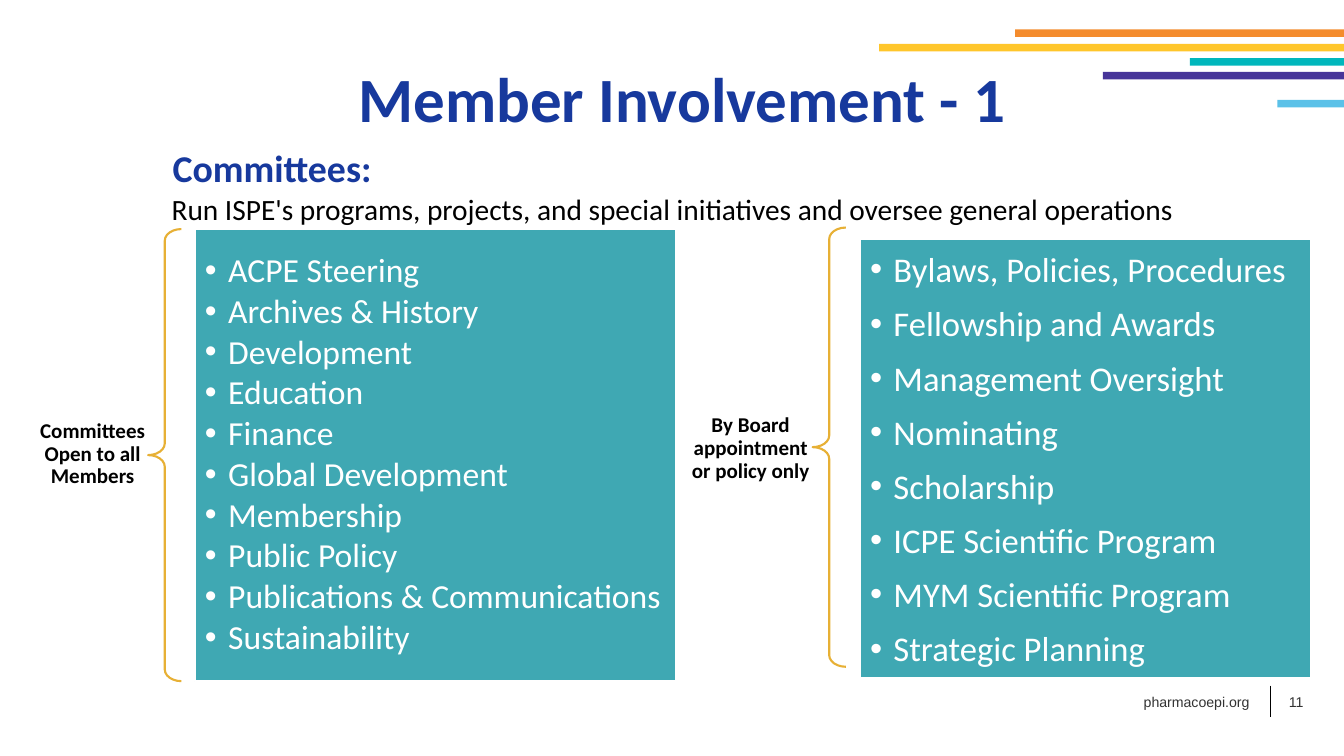
"""Builds the Member Involvement slide with its two bracketed committee lists."""
from lxml import etree
from pptx import Presentation
from pptx.dml.color import RGBColor
from pptx.enum.shapes import MSO_CONNECTOR, MSO_SHAPE
from pptx.enum.text import MSO_ANCHOR, PP_ALIGN
from pptx.oxml.ns import qn
from pptx.util import Inches, Pt

LEFT, CENTER = PP_ALIGN.LEFT, PP_ALIGN.CENTER
TOP, MIDDLE = MSO_ANCHOR.TOP, MSO_ANCHOR.MIDDLE
RECTANGLE, BRACE = MSO_SHAPE.RECTANGLE, MSO_SHAPE.LEFT_BRACE
STRAIGHT = MSO_CONNECTOR.STRAIGHT

SLIDE_WIDTH, SLIDE_HEIGHT = 17.78, 10
BLUE, TEAL, GOLD = "17399D", "3FA8B3", "E7B035"
WHITE, BLACK, GREY = "FFFFFF", "000000", "333333"
BULLET_INDENT = 0.31

STRIPES = [
    (13.43, 0.39, "F48C2D"),
    (11.63, 0.58, "FFC62B"),
    (15.74, 0.77, "00B7BC"),
    (14.59, 0.95, "473599"),
    (16.9, 1.32, "5BC1E8"),
]
STRIPE_HEIGHT = 0.1

TITLE = "Member Involvement - 1"
HEADING = "Committees:"
SUMMARY = "Run ISPE's programs, projects, and special initiatives and oversee general operations"
FOOTER, PAGE_NUMBER = "pharmacoepi.org", "11"

GROUPS = [
    {
        "label": "Committees Open to all Members",
        "label_at": (0.13, 5.49, 2.19, 1.04),
        "brace_at": (1.96, 3.03, 0.44, 5.98),
        "panel_at": (2.58, 3.03, 6.36, 5.98),
        "size": 32, "line_spacing": 0.9, "space_after": 4.2, "inset": 0.13,
        "items": ["ACPE Steering", "Archives & History", "Development", "Education",
                  "Finance", "Global Development", "Membership", "Public Policy",
                  "Publications & Communications", "Sustainability"],
    },
    {
        "label": "By Board appointment or policy only",
        "label_at": (8.97, 5.21, 1.92, 1.45),
        "brace_at": (10.75, 3.01, 0.44, 5.81),
        "panel_at": (11.37, 3.16, 5.98, 5.81),
        "size": 33, "line_spacing": 1, "space_after": 12, "inset": 0.14,
        "items": ["Bylaws, Policies, Procedures", "Fellowship and Awards",
                  "Management Oversight", "Nominating", "Scholarship",
                  "ICPE Scientific Program", "MYM Scientific Program",
                  "Strategic Planning"],
    },
]


def rgb(value):
    return RGBColor.from_string(value)


def add_bullet(para):
    properties = para._p.get_or_add_pPr()
    properties.set("marL", str(Inches(BULLET_INDENT)))
    properties.set("indent", str(-Inches(BULLET_INDENT)))
    etree.SubElement(properties, qn("a:buFont"), typeface="Arial")
    etree.SubElement(properties, qn("a:buChar"), char="•")


def write(box, lines, size, color, bold=False, font="Calibri", align=LEFT, anchor=TOP,
          insets=(0, 0), line_spacing=1, space_after=0, bulleted=False):
    frame = box.text_frame
    frame.word_wrap = True
    frame.vertical_anchor = anchor
    frame.margin_left = frame.margin_right = Inches(insets[0])
    frame.margin_top = frame.margin_bottom = Inches(insets[1])
    frame.text = "\n".join(lines)
    for para in frame.paragraphs:
        para.alignment = align
        para.line_spacing = line_spacing
        para.space_before = Pt(0)
        para.space_after = Pt(space_after)
        if bulleted:
            add_bullet(para)
        para.font.name = font
        para.font.size = Pt(size)
        para.font.bold = bold
        para.font.color.rgb = rgb(color)


def add_text(page, at, text, size, color, **style):
    box = page.shapes.add_textbox(*map(Inches, at))
    write(box, [text], size, color, **style)


def add_shape(page, kind, at, fill=None, line=None):
    shape = page.shapes.add_shape(kind, *map(Inches, at))
    shape.shadow.inherit = False
    if fill:
        shape.fill.solid()
        shape.fill.fore_color.rgb = rgb(fill)
    else:
        shape.fill.background()
    if line:
        shape.line.color.rgb = rgb(line)
        shape.line.width = Pt(2)
    else:
        shape.line.fill.background()
    return shape


def add_group(page, group):
    add_text(page, group["label_at"], group["label"], 20, BLACK, bold=True, align=CENTER,
             anchor=MIDDLE, insets=(0.16, 0.06), line_spacing=0.9)
    brace = add_shape(page, BRACE, group["brace_at"], line=GOLD)
    brace.adjustments[0] = 0.35
    panel = add_shape(page, RECTANGLE, group["panel_at"], TEAL, WHITE)
    write(panel, group["items"], group["size"], WHITE, anchor=MIDDLE,
          insets=(group["inset"], group["inset"]), line_spacing=group["line_spacing"],
          space_after=group["space_after"], bulleted=True)


def add_footer(page):
    divider = page.shapes.add_connector(
        STRAIGHT, *map(Inches, (16.8, 9.07, 16.8, 9.49)))
    divider.line.color.rgb = rgb(BLACK)
    divider.line.width = Pt(0.5)
    etree.SubElement(divider._element.spPr, qn("a:effectLst"))
    add_text(page, (15.13, 9.17, 1.45, 0.24), FOOTER, 13.5, GREY, font="Arial")
    add_text(page, (17.05, 9.17, 0.6, 0.24), PAGE_NUMBER, 13.5, GREY, font="Arial")


def main():
    deck = Presentation()
    deck.slide_width, deck.slide_height = Inches(SLIDE_WIDTH), Inches(SLIDE_HEIGHT)
    page = deck.slides.add_slide(deck.slide_layouts[5])
    for left, top, color in STRIPES:
        add_shape(page, RECTANGLE, (left, top, SLIDE_WIDTH - left, STRIPE_HEIGHT), color)
    title = page.shapes.title
    title.left, title.top, title.width, title.height = map(Inches, (4.64, 0.74, 9, 1.11))
    write(title, [TITLE], 60, BLUE, bold=True, insets=(0.1, 0.05))
    add_text(page, (0.49, 1.91, 6.22, 0.61), HEADING, 36, BLUE, bold=True, align=CENTER)
    add_text(page, (2.27, 2.53, 13.74, 0.47), SUMMARY, 28, BLACK)
    for group in GROUPS:
        add_group(page, group)
    add_footer(page)
    deck.save("out.pptx")


if __name__ == "__main__":
    main()
